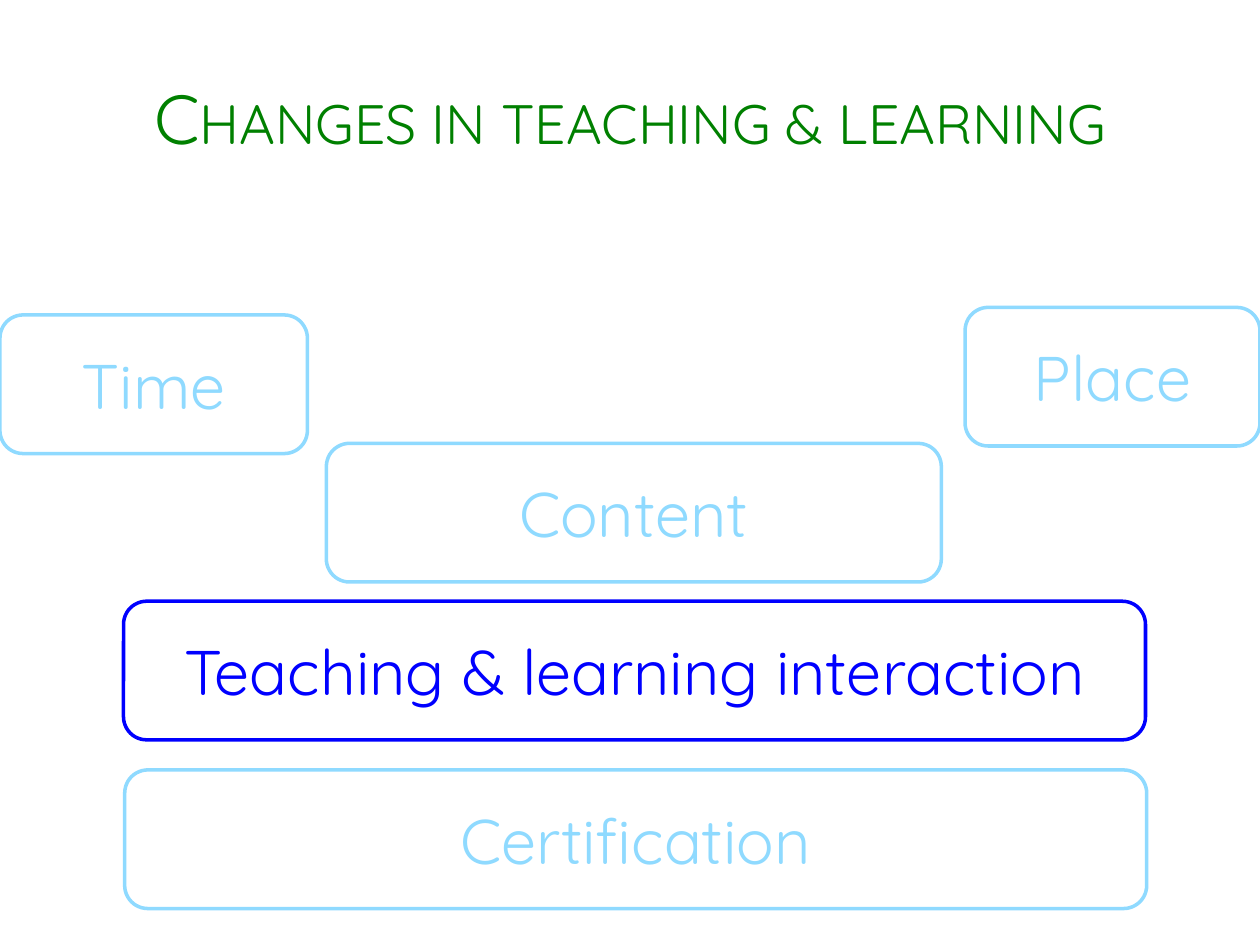
from pptx import Presentation
from pptx.dml.color import RGBColor
from pptx.enum import shapes, text
from pptx.util import Pt

COLORS = {"title": "008000", "muted": "8FDAFF", "active": "0000FF"}
FONT = "Quicksand"
TITLE = "Changes in teaching & learning"
BOX_HEIGHT = 79.2
# label, left, top, width, colour
BOXES = [
    ("Content", 186.5, 253.4, 351.4, "muted"),
    ("Teaching & learning interaction", 70.6, 343.6, 584, "active"),
    ("Certification", 71.3, 440, 584, "muted"),
    ("Time", 0, 180, 175.7, "muted"),
    ("Place", 551.5, 175.7, 168.5, "muted"),
]


def write(shape, words, size, color):
    tf = shape.text_frame
    frame_format = {"word_wrap": True, "vertical_anchor": text.MSO_ANCHOR.MIDDLE,
                    "auto_size": text.MSO_AUTO_SIZE.NONE}
    for name, value in frame_format.items():
        setattr(tf, name, value)
    p = tf.paragraphs[0]
    p.alignment = text.PP_ALIGN.CENTER
    r = p.add_run()
    r.text = words
    for name, value in {"name": FONT, "size": Pt(size), "bold": False}.items():
        setattr(r.font, name, value)
    r.font.color.rgb = RGBColor.from_string(COLORS[color])
    return r


def add_box(s, label, left, top, width, color):
    sp = s.shapes.add_shape(shapes.MSO_SHAPE.ROUNDED_RECTANGLE,
                            Pt(left), Pt(top), Pt(width), Pt(BOX_HEIGHT))
    sp.shadow.inherit = False
    sp.fill.background()
    sp.line.color.rgb = RGBColor.from_string(COLORS[color])
    sp.line.width = Pt(2)
    write(sp, label, 36, color)


def main():
    prs = Presentation()
    prs.slide_width, prs.slide_height = Pt(720), Pt(540)
    s = prs.slides.add_slide(prs.slide_layouts[5])
    title = s.shapes.title
    place = {"left": 36, "top": 21.6, "width": 648, "height": 90}
    for name, value in place.items():
        setattr(title, name, Pt(value))
    r = write(title, TITLE, 39.6, "title")
    r.font._element.set("cap", "small")
    for box in BOXES:
        add_box(s, *box)
    prs.save("out.pptx")


if __name__ == "__main__":
    main()
